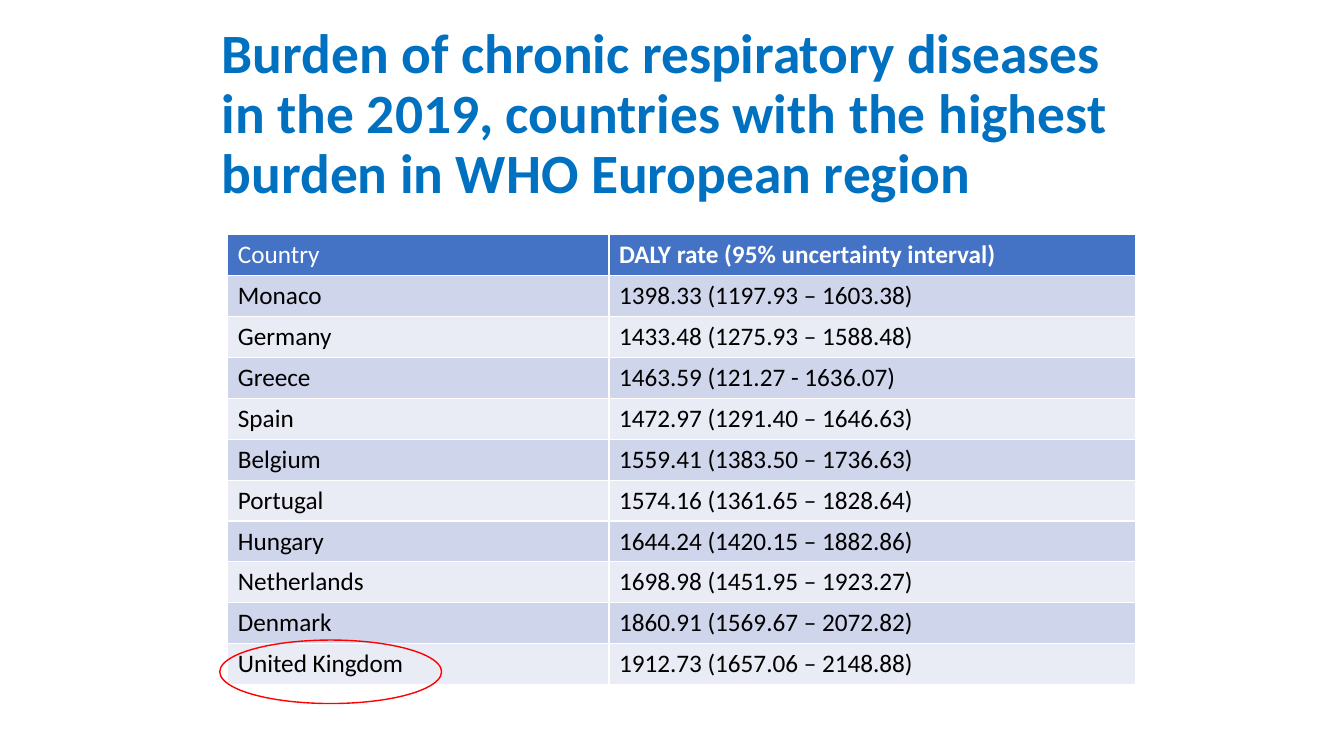
"""Build the slide on the burden of chronic respiratory diseases."""
from pptx import Presentation
from pptx.dml.color import RGBColor
from pptx.enum.shapes import MSO_SHAPE
from pptx.enum.text import MSO_ANCHOR, MSO_AUTO_SIZE, PP_ALIGN
from pptx.util import Inches, Pt

COLORS = {
    "title": "0070C0",
    "head": "4472C4",
    "odd": "CFD5EA",
    "even": "E9EBF5",
    "white": "FFFFFF",
    "black": "000000",
    "mark": "FF0000",
}
ROWS = [
    ("Country", "DALY rate (95% uncertainty interval)"),
    ("Monaco", "1398.33 (1197.93 – 1603.38)"),
    ("Germany", "1433.48 (1275.93 – 1588.48)"),
    ("Greece", "1463.59 (121.27 - 1636.07)"),
    ("Spain", "1472.97 (1291.40 – 1646.63)"),
    ("Belgium", "1559.41 (1383.50 – 1736.63)"),
    ("Portugal", "1574.16 (1361.65 – 1828.64)"),
    ("Hungary", "1644.24 (1420.15 – 1882.86)"),
    ("Netherlands", "1698.98 (1451.95 – 1923.27)"),
    ("Denmark", "1860.91 (1569.67 – 2072.82)"),
    ("United Kingdom", "1912.73 (1657.06 – 2148.88)"),
]


def color(name):
    return RGBColor.from_string(COLORS[name])


def style(frame, size, tint, bold):
    for run in frame.paragraphs[0].runs:
        run.font.name = "Calibri"
        run.font.size = Pt(size)
        run.font.bold = bold
        run.font.color.rgb = color(tint)


deck = Presentation()
deck.slide_width = Inches(13.33)
deck.slide_height = Inches(7.5)
slide = deck.slides.add_slide(deck.slide_layouts[5])

title = slide.shapes.title
title.left, title.top = Inches(2.1), Inches(0.52)
title.width, title.height = Inches(9.22), Inches(1.25)
frame = title.text_frame
frame.text = (
    "Burden of chronic respiratory diseases in the 2019, "
    "countries with the highest burden in WHO European region"
)
frame.word_wrap = True
frame.auto_size = MSO_AUTO_SIZE.NONE
frame.vertical_anchor = MSO_ANCHOR.MIDDLE
frame.paragraphs[0].alignment = PP_ALIGN.LEFT
frame.paragraphs[0].line_spacing = 0.9
style(frame, 39.6, "title", True)

table = slide.shapes.add_table(
    len(ROWS), 2, Inches(2.26), Inches(2.33), Inches(9), Inches(4.46)
).table
table.columns[0].width = Inches(3.78)
table.columns[1].width = Inches(5.22)
for i, row in enumerate(ROWS):
    fill = "head" if i == 0 else "odd" if i % 2 else "even"
    for j, text in enumerate(row):
        cell = table.cell(i, j)
        cell.text_frame.text = text
        cell.fill.solid()
        cell.fill.fore_color.rgb = color(fill)
        tint = "black" if i else "white"
        style(cell.text_frame, 18, tint, i == 0 and j == 1)

ring = slide.shapes.add_shape(
    MSO_SHAPE.OVAL, Inches(2.18), Inches(6.35), Inches(2.2), Inches(0.63)
)
ring.shadow.inherit = False
ring.fill.background()
ring.line.color.rgb = color("mark")
ring.line.width = Pt(1)

deck.save("out.pptx")
